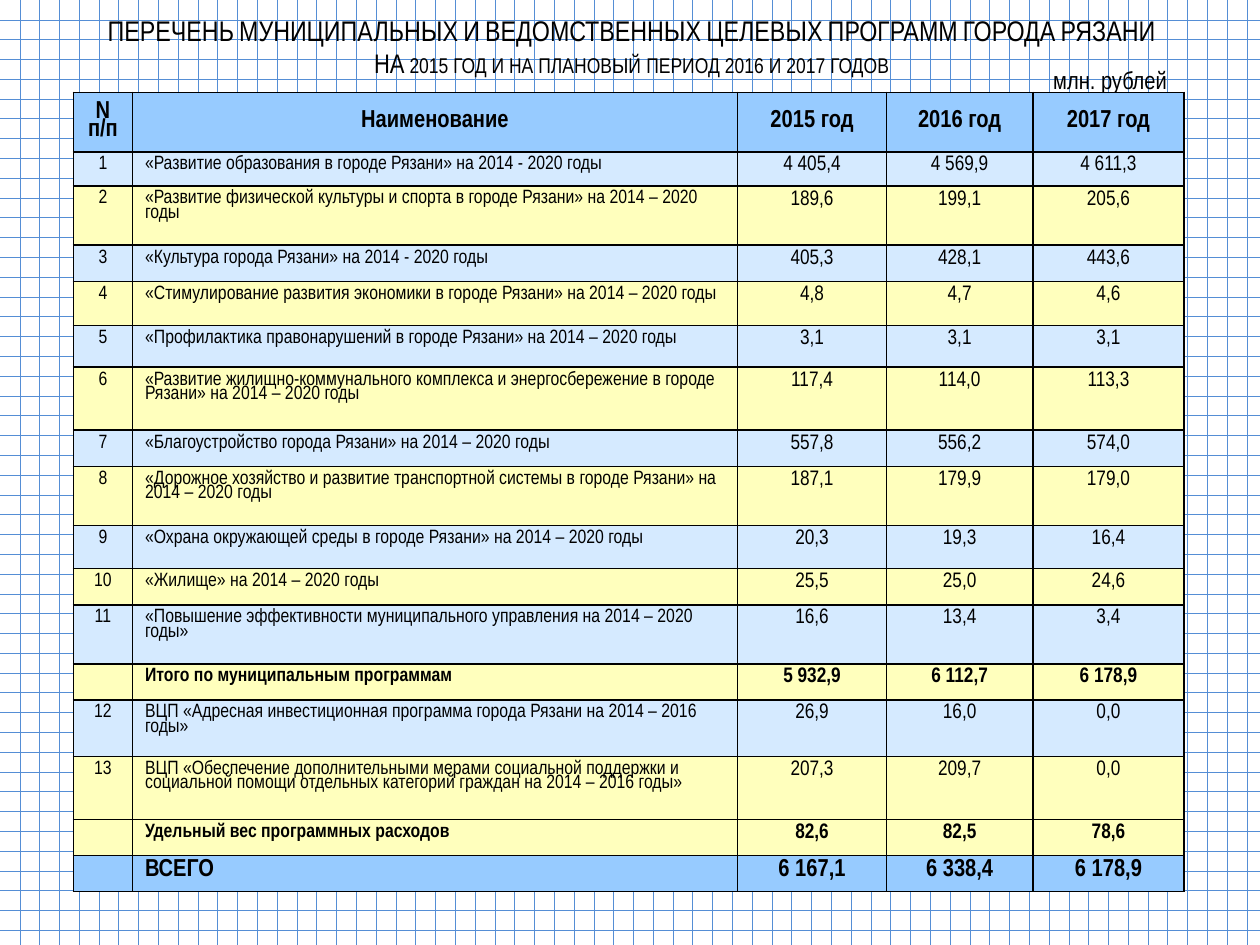
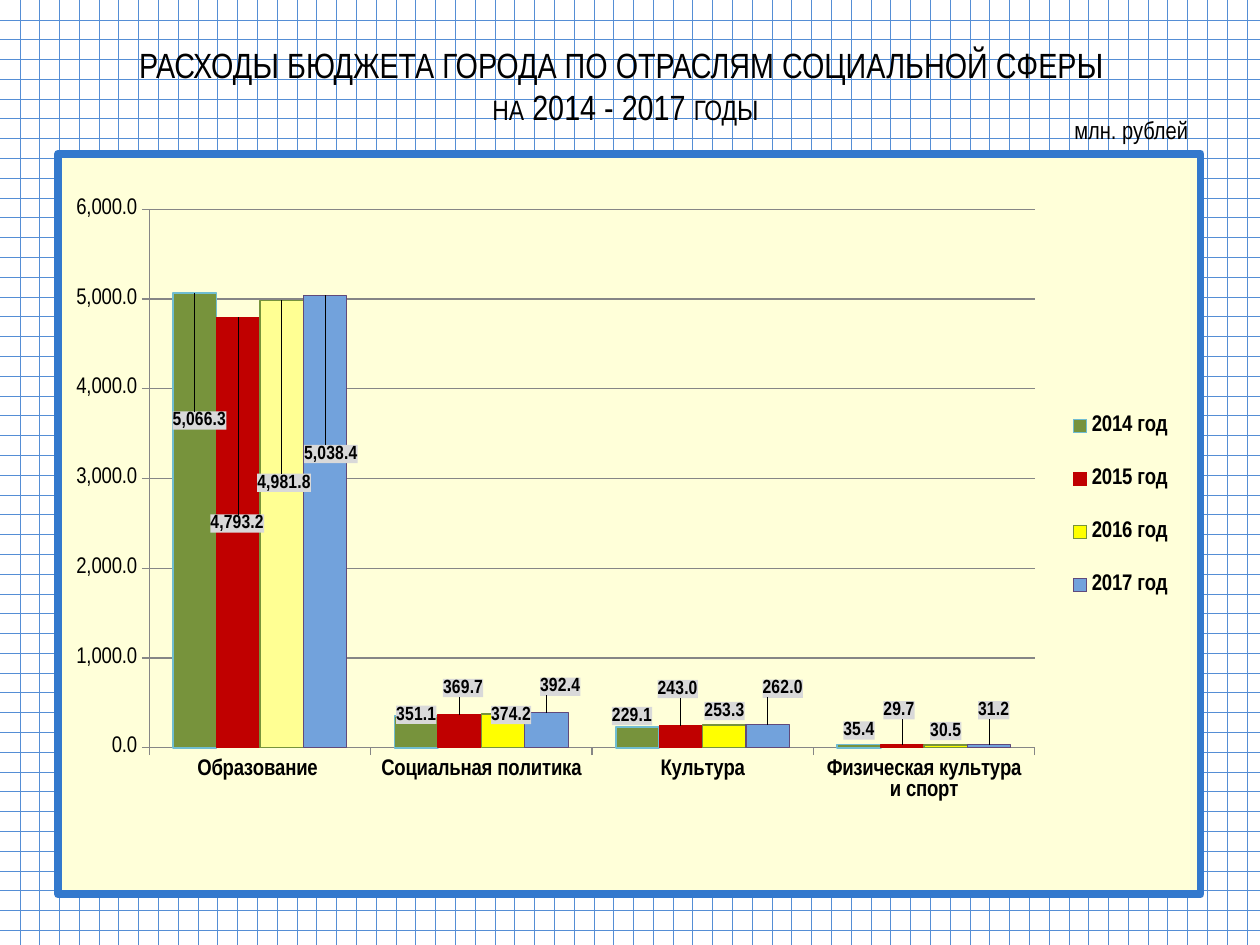
import copy
import dataclasses
import itertools

import lxml.etree
import pptx
import pptx.chart.data
import pptx.dml.color
import pptx.enum.chart
import pptx.enum.dml
import pptx.enum.text
import pptx.oxml
import pptx.oxml.ns
import pptx.util

Cm = pptx.util.Cm
Pt = pptx.util.Pt
qn = pptx.oxml.ns.qn
ALIGN = pptx.enum.text.PP_ALIGN
ANCHOR = pptx.enum.text.MSO_ANCHOR


@dataclasses.dataclass(frozen=True)
class Theme:
    font: str = "Arial Narrow"
    base: str = "Calibri"
    ink: str = "000000"
    paper: str = "FFFFFF"
    grid: str = "558ED5"
    head: str = "97CBFF"
    blue: str = "D5EAFF"
    cream: str = "FFFFBD"
    panel: str = "FFFFD9"
    frame: str = "3379CD"
    axis: str = "868686"
    tag: str = "D9D9D9"
    big: float = 14
    axis_size: float = 13
    value: float = 12
    small: float = 11


THEME = Theme()
UNIT = "млн. рублей"

LIST_TITLE = [
    [("ПЕРЕЧЕНЬ МУНИЦИПАЛЬНЫХ И ВЕДОМСТВЕННЫХ ЦЕЛЕВЫХ ПРОГРАММ ГОРОДА РЯЗАНИ", 16.2, True)],
    [("НА 2015 год и на плановый период 2016 и 2017 годов", 15.3, True)],
]
COST_TITLE = [
    [("РАСХОДЫ БЮДЖЕТА ГОРОДА ПО ОТРАСЛЯМ СОЦИАЛЬНОЙ СФЕРЫ ", 20, False)],
    [("на", 20, True), (" 2014 - 2017 ", 20, False), ("годы", 20, True)],
]

HEAD, ITEM, SUM, TOTAL = "head", "item", "sum", "total"
ROWS = [
    (HEAD, 1.17, "N п/п", "Наименование", "2015 год", "2016 год", "2017 год"),
    (ITEM, 0.69, "1", "«Развитие образования в городе Рязани» на 2014 - 2020 годы", "4 405,4", "4 569,9", "4 611,3"),
    (ITEM, 1.19, "2", "«Развитие физической культуры и спорта в городе Рязани» на 2014 – 2020 годы", "189,6", "199,1", "205,6"),
    (ITEM, 0.73, "3", "«Культура города Рязани» на 2014 - 2020 годы", "405,3", "428,1", "443,6"),
    (ITEM, 0.89, "4", "«Стимулирование развития экономики в городе Рязани» на 2014 – 2020 годы", "4,8", "4,7", "4,6"),
    (ITEM, 0.84, "5", "«Профилактика правонарушений в городе Рязани» на 2014 – 2020 годы", "3,1", "3,1", "3,1"),
    (ITEM, 1.27, "6", "«Развитие жилищно-коммунального комплекса и энергосбережение в городе Рязани» на 2014 – 2020 годы", "117,4", "114,0", "113,3"),
    (ITEM, 0.73, "7", "«Благоустройство города Рязани» на 2014 – 2020 годы", "557,8", "556,2", "574,0"),
    (ITEM, 1.19, "8", "«Дорожное хозяйство и развитие транспортной системы в городе Рязани» на 2014 – 2020 годы", "187,1", "179,9", "179,0"),
    (ITEM, 0.87, "9", "«Охрана окружающей среды в городе Рязани» на 2014 – 2020 годы", "20,3", "19,3", "16,4"),
    (ITEM, 0.73, "10", "«Жилище» на 2014 – 2020 годы", "25,5", "25,0", "24,6"),
    (ITEM, 1.19, "11", "«Повышение эффективности муниципального управления на 2014 – 2020 годы»", "16,6", "13,4", "3,4"),
    (SUM, 0.73, "", "Итого по муниципальным программам", "5 932,9", "6 112,7", "6 178,9"),
    (ITEM, 1.14, "12", "ВЦП «Адресная инвестиционная программа города Рязани на 2014 – 2016 годы»", "26,9", "16,0", "0,0"),
    (ITEM, 1.27, "13", "ВЦП «Обеспечение дополнительными мерами социальной поддержки и социальной помощи отдельных категорий граждан на 2014 – 2016 годы»", "207,3", "209,7", "0,0"),
    (SUM, 0.66, "", "Удельный вес программных расходов", "82,6", "82,5", "78,6"),
    (TOTAL, 0.72, "", "ВСЕГО", "6 167,1", "6 338,4", "6 178,9"),
]
WIDTHS = [1.19, 12.2, 3, 2.95, 3.05]

FIELDS = ["Образование ", "Социальная политика", "Культура", "Физическая культура и спорт"]
YEARS = [
    ("2014 год", (5066.3, 351.1, 229.1, 35.4), "77933C", "70BDD2", 1,
     {0: (0.4, 19.1), 1: (0, 1.7), 2: (-0.5, 0.4)}),
    ("2015 год", (4793.2, 369.7, 243, 29.7), "C00000", "C00000", 0.75,
     {0: (-0.1, 29.7), 1: (0.3, -1.7), 2: (-0.3, -3.1), 3: (-0.3, -2.8)}),
    ("2016 год", (4981.8, 374.2, 253.3, 30.5), "FFFF00", "77933C", 0.75,
     {0: (0.2, 26.5), 1: (0.7, 2)}),
    ("2017 год", (5038.4, 392.4, 262, 31.2), "72A2DC", "604A7B", 0.75,
     {0: (0.5, 23.3), 1: (1.2, -1.6), 2: (1.3, -2.9), 3: (0.4, -2.8)}),
]
PALE = (2, 0, "FFFF93")
PLOT = {"layoutTarget": "inner", "xMode": "edge", "yMode": "edge",
        "x": 0.08, "y": 0.075, "w": 0.775, "h": 0.727}
LEGEND = {"xMode": "edge", "yMode": "edge", "x": 0.87, "y": 0.31, "w": 0.12, "h": 0.33}


def tint(hue):
    return pptx.dml.color.RGBColor.from_string(hue)


def paint(fill, hue):
    fill.solid()
    fill.fore_color.rgb = tint(hue)


def stroke(line, hue, width):
    line.color.rgb = tint(hue)
    line.width = Pt(width)


def style(font, size=None, bold=False):
    font.name = THEME.font
    font.bold = bold
    font.color.rgb = tint(THEME.ink)
    if size:
        font.size = Pt(size)


def place(box):
    return [Cm(part) for part in box]


def start(deck, lines, box, unit_box):
    slide = deck.slides.add_slide(deck.slide_layouts[5])
    fill = slide.background.fill
    fill.patterned()
    fill.pattern = pptx.enum.dml.MSO_PATTERN.DOTTED_GRID
    fill.fore_color.rgb = tint(THEME.grid)
    fill.back_color.rgb = tint(THEME.paper)

    title = slide.shapes.title
    title.left, title.top, title.width, title.height = place(box)
    frame = title.text_frame
    frame.word_wrap = True
    frame.auto_size = pptx.enum.text.MSO_AUTO_SIZE.NONE
    frame.vertical_anchor = ANCHOR.TOP
    para = frame.paragraphs[0]
    para.alignment = ALIGN.CENTER
    style(para.font)
    for row, line in enumerate(lines):
        if row:
            para.add_line_break()
        for text, size, caps in line:
            run = para.add_run()
            run.text = text
            run.font.size = Pt(size)
            if caps:
                run.font._element.set("cap", "small")

    note = slide.shapes.add_textbox(*place(unit_box)).text_frame
    note.word_wrap = True
    note.vertical_anchor = ANCHOR.MIDDLE
    note.text = UNIT
    note.paragraphs[0].alignment = ALIGN.CENTER
    style(note.paragraphs[0].font, THEME.big)
    return slide


def edge(cell):
    props = cell._tc.get_or_add_tcPr()
    for spot, side in enumerate(("lnL", "lnR", "lnT", "lnB")):
        line = lxml.etree.Element(qn("a:" + side), w=str(Pt(1)))
        fill = lxml.etree.SubElement(line, qn("a:solidFill"))
        lxml.etree.SubElement(fill, qn("a:srgbClr"), val=THEME.ink)
        props.insert(spot, line)


def add_list(slide):
    shape = slide.shapes.add_table(
        len(ROWS), len(WIDTHS), Cm(1.48), Cm(1.86),
        Cm(sum(WIDTHS)), Cm(sum(row[1] for row in ROWS)))
    table = shape.table
    table.first_row = table.horz_banding = False
    for col, width in zip(table.columns, WIDTHS):
        col.width = Cm(width)
    for r, (kind, height, *texts) in enumerate(ROWS):
        table.rows[r].height = Cm(height)
        band = THEME.blue if r % 2 else THEME.cream
        hue = {HEAD: THEME.head, TOTAL: THEME.head, SUM: THEME.cream}.get(kind, band)
        for c, text in enumerate(texts):
            cell = table.cell(r, c)
            paint(cell.fill, hue)
            edge(cell)
            cell.text = text
            cell.vertical_anchor = ANCHOR.MIDDLE if kind == HEAD else ANCHOR.TOP
            size = THEME.value if c > 1 else THEME.small
            if kind in (HEAD, TOTAL):
                size = THEME.big
            para = cell.text_frame.paragraphs[0]
            para.alignment = ALIGN.LEFT if c == 1 and kind != HEAD else ALIGN.CENTER
            para.line_spacing = 0.8
            style(para.font, size, kind != ITEM)
            if not text:
                lxml.etree.SubElement(para._p, qn("a:endParaRPr"), sz=str(THEME.small * 100))


def layout(parts):
    node = pptx.oxml.parse_xml(
        f'<c:layout xmlns:c="{pptx.oxml.ns.nsdecls("c").split(chr(34))[1]}"><c:manualLayout/></c:layout>')
    for key, val in parts.items():
        lxml.etree.SubElement(node[0], qn("c:" + key), val=str(val))
    return node


def block(hue, border=None, width=0):
    line = ""
    if border:
        line = f'<a:ln w="{Pt(width)}"><a:solidFill><a:srgbClr val="{border}"/></a:solidFill></a:ln>'
    return pptx.oxml.parse_xml(
        f'<c:spPr {pptx.oxml.ns.nsdecls("c", "a")}><a:solidFill>'
        f'<a:srgbClr val="{hue}"/></a:solidFill>{line}</c:spPr>')


def set_tags(series, moves):
    tags = series.data_labels
    tags.show_value = True
    tags.number_format = "#,##0.0"
    tags.number_format_is_linked = False
    tags.position = pptx.enum.chart.XL_LABEL_POSITION.OUTSIDE_END
    style(tags.font, THEME.small, True)
    node = tags._element
    for lead in node.findall(qn("c:showLeaderLines")):
        node.remove(lead)
    node.find(qn("c:numFmt")).addnext(block(THEME.tag))
    shared = list(node)
    for spot, (idx, (dx, dy)) in enumerate(moves.items()):
        tag = lxml.etree.Element(qn("c:dLbl"))
        lxml.etree.SubElement(tag, qn("c:idx"), val=str(idx))
        tag.append(layout({"x": dx / 100, "y": dy / 100}))
        tag.extend(copy.deepcopy(part) for part in shared)
        node.insert(spot, tag)


def add_costs(slide):
    data = pptx.chart.data.CategoryChartData(number_format="#,##0.0")
    data.categories = FIELDS
    for name, vals, *_ in YEARS:
        data.add_series(name, vals)
    chart = slide.shapes.add_chart(
        pptx.enum.chart.XL_CHART_TYPE.COLUMN_CLUSTERED,
        *place((1.09, 3.02, 23.19, 15.09)), data).chart
    chart.has_title = False
    chart.font.name = THEME.base
    chart.font.size = Pt(18)
    chart.font.color.rgb = tint(THEME.ink)
    chart._chartSpace.find(qn("c:chart")).addnext(block(THEME.panel, THEME.frame, 4.5))

    plot = chart.plots[0]
    plot.gap_width = 110
    plot.overlap = 0
    plot.vary_by_categories = False
    for series, (_, _, hue, border, width, moves) in zip(plot.series, YEARS):
        series.invert_if_negative = False
        paint(series.format.fill, hue)
        stroke(series.format.line, border, width)
        set_tags(series, moves)
    which, spot, hue = PALE
    look = plot.series[which].points[spot].format
    paint(look.fill, hue)
    stroke(look.line, *YEARS[which][3:5])

    vals, cats = chart.value_axis, chart.category_axis
    vals.minimum_scale, vals.maximum_scale, vals.major_unit = 0, 6000, 1000
    vals.tick_labels.number_format = "#,##0.0"
    vals.tick_labels.number_format_is_linked = False
    stroke(vals.major_gridlines.format.line, THEME.axis, 0.75)
    for axis, bold in ((vals, False), (cats, True)):
        axis.major_tick_mark = pptx.enum.chart.XL_TICK_MARK.OUTSIDE
        stroke(axis.format.line, THEME.axis, 0.75)
        style(axis.tick_labels.font, THEME.axis_size, bold)

    chart.has_legend = True
    legend = chart.legend
    legend.position = pptx.enum.chart.XL_LEGEND_POSITION.RIGHT
    legend.include_in_layout = False
    style(legend.font, THEME.axis_size, True)
    for old in legend._element.findall(qn("c:layout")):
        legend._element.remove(old)
    legend._element.find(qn("c:legendPos")).addnext(layout(LEGEND))
    area = chart._chartSpace.find(".//" + qn("c:plotArea"))
    for old in area.findall(qn("c:layout")):
        area.remove(old)
    area.insert(0, layout(PLOT))


def main():
    deck = pptx.Presentation()
    deck.slide_width, deck.slide_height = Cm(25.4), Cm(19.05)
    add_list(start(deck, LIST_TITLE, (0.08, 0.13, 25.3, 1.19), (20.88, 1.12, 3, 0.99)))
    add_costs(start(deck, COST_TITLE, (0.71, 0.74, 23.8, 0.79), (20.9, 2.18, 3.81, 0.86)))
    deck.save("out.pptx")


if __name__ == "__main__":
    main()
